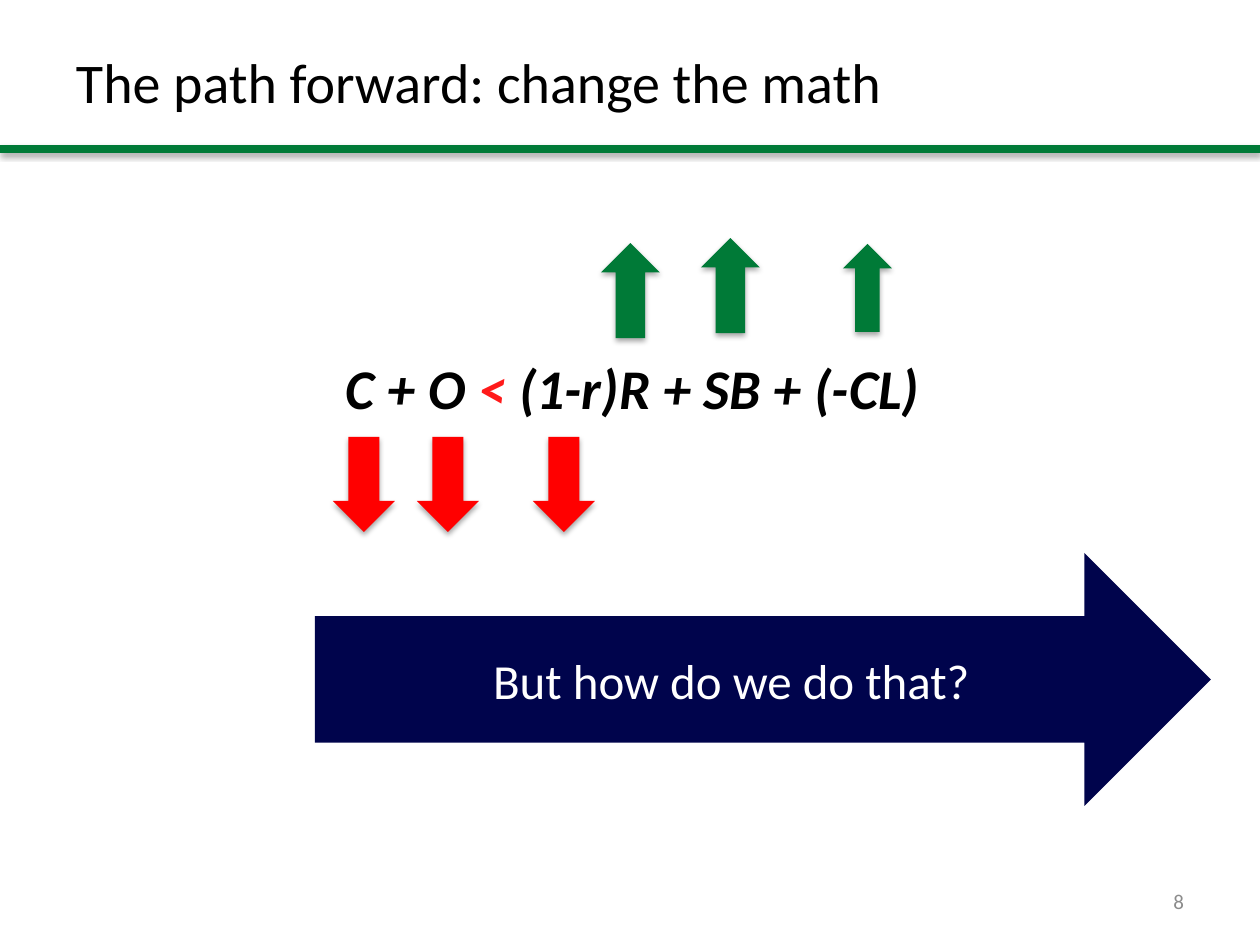
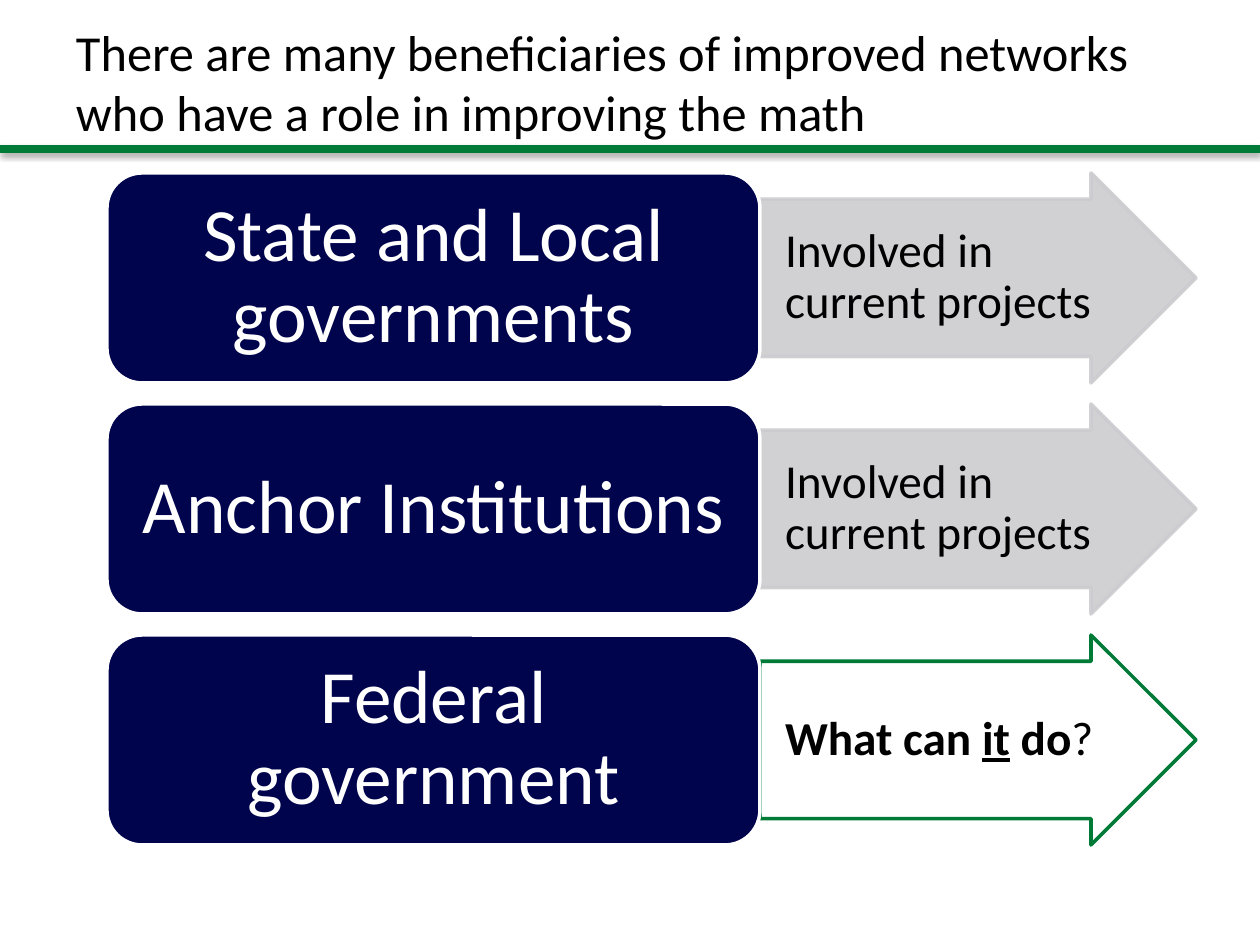
from lxml import etree
from pptx import Presentation
from pptx.dml.color import RGBColor
from pptx.enum.shapes import MSO_CONNECTOR, MSO_SHAPE
from pptx.enum.text import MSO_ANCHOR, MSO_AUTO_SIZE, PP_ALIGN
from pptx.oxml.ns import qn
from pptx.util import Pt

STRAIGHT = MSO_CONNECTOR.STRAIGHT
UP, DOWN, RIGHT_ARROW = MSO_SHAPE.UP_ARROW, MSO_SHAPE.DOWN_ARROW, MSO_SHAPE.RIGHT_ARROW
ROUNDED = MSO_SHAPE.ROUNDED_RECTANGLE
MIDDLE = MSO_ANCHOR.MIDDLE
LEFT, CENTER, RIGHT = PP_ALIGN.LEFT, PP_ALIGN.CENTER, PP_ALIGN.RIGHT
NO_FIT = MSO_AUTO_SIZE.NONE

BLACK = RGBColor(0x00, 0x00, 0x00)
WHITE = RGBColor(0xFF, 0xFF, 0xFF)
GREEN = RGBColor(0x00, 0x7A, 0x37)
RED = RGBColor(0xFF, 0x00, 0x00)
LESS_RED = RGBColor(0xFF, 0x1A, 0x1A)
NAVY = RGBColor(0x00, 0x04, 0x4C)
SILVER = RGBColor(0xCC, 0xCC, 0xD0)
GRAY = RGBColor(0x8C, 0x8C, 0x8C)

FONT = "Calibri"
WIDTH, HEIGHT = 1260, 945
EMU_PER_INCH, PX_PER_INCH = 914400, 126


def px(*lengths):
    return [round(length * EMU_PER_INCH / PX_PER_INCH) for length in lengths]


def write(frame, text, size=28, color=BLACK, align=LEFT, insets=(13, 6, 13, 6),
          spacing=None, bold=False, italic=False):
    frame.word_wrap = True
    frame.auto_size = NO_FIT
    frame.vertical_anchor = MIDDLE
    (frame.margin_left, frame.margin_top,
     frame.margin_right, frame.margin_bottom) = px(*insets)
    paragraph = frame.paragraphs[0]
    paragraph.alignment = align
    if spacing:
        paragraph.line_spacing = spacing
    pieces = [(text, {})] if isinstance(text, str) else text
    for words, changes in pieces:
        run = paragraph.add_run()
        run.text = words
        font = run.font
        font.name, font.size = FONT, Pt(size)
        font.bold = changes.get("bold", bold)
        font.italic = italic
        font.underline = changes.get("underline", False)
        font.color.rgb = changes.get("color", color)


def add_effects(properties, shadow):
    for old in properties.findall(qn("a:effectLst")):
        properties.remove(old)
    effects = etree.SubElement(properties, qn("a:effectLst"))
    if shadow:
        outer = etree.SubElement(effects, qn("a:outerShdw"), blurRad="40000",
                                 dist="23000", dir="5400000", rotWithShape="0")
        tint = etree.SubElement(outer, qn("a:srgbClr"), val=str(BLACK))
        etree.SubElement(tint, qn("a:alpha"), val="35000")


class Deck:
    def __init__(self):
        self.presentation = Presentation()
        self.presentation.slide_width, self.presentation.slide_height = px(WIDTH, HEIGHT)
        self.slide = None

    def start_slide(self, title, size):
        self.slide = self.presentation.slides.add_slide(self.presentation.slide_layouts[5])
        self.band()
        heading = self.slide.shapes.title
        heading.left, heading.top, heading.width, heading.height = px(63, 38, 1134, 87)
        write(heading.text_frame, title, size=size)

    def band(self):
        rule = self.slide.shapes.add_connector(STRAIGHT, *px(0, 149, WIDTH, 149))
        rule.line.color.rgb = GREEN
        rule.line.width = Pt(5)
        add_effects(rule.line._get_or_add_ln().getparent(), shadow=True)

    def text(self, box, text, **style):
        write(self.slide.shapes.add_textbox(*px(*box)).text_frame, text, **style)

    def shape(self, kind, box, fill, line=None, shadow=False, opacity=100,
              adjustments=(), text=None, **style):
        shape = self.slide.shapes.add_shape(kind, *px(*box))
        for index, value in enumerate(adjustments):
            shape.adjustments[index] = value
        shape.fill.solid()
        shape.fill.fore_color.rgb = fill
        if line is None:
            shape.line.fill.background()
        else:
            shape.line.color.rgb = line
            shape.line.width = Pt(2)
        shape.shadow.inherit = False
        properties = shape._element.spPr
        if shadow:
            add_effects(properties, shadow=True)
        if opacity < 100:
            for tint in properties.iter(qn("a:srgbClr")):
                etree.SubElement(tint, qn("a:alpha"), val=str(opacity * 1000))
        if text:
            write(shape.text_frame, text, **style)


def build_math(deck):
    deck.start_slide("The path forward: change the math", 32)
    deck.text((333, 353, 606, 68),
              [("C + O ", {}), ("<", {"color": LESS_RED}), (" (1-r)R + SB + (-CL)", {})],
              size=32, bold=True, italic=True)
    for left in (333, 417, 533):
        deck.shape(DOWN, (left, 437, 62, 95), RED, shadow=True)
    for rise in ((601, 243, 59, 95), (701, 238, 59, 95), (843, 244, 49, 88)):
        deck.shape(UP, rise, GREEN, shadow=True)
    deck.shape(RIGHT_ARROW, (315, 553, 896, 253), NAVY, text="But how do we do that?",
               size=28, color=WHITE, align=CENTER)
    deck.text((903, 876, 294, 50), "8", size=12, color=GRAY, align=RIGHT)


def build_beneficiaries(deck):
    deck.start_slide("There are many beneficiaries of improved networks "
                     "who have a role in improving the math", 28.8)
    involved = "Involved in current projects"
    question = [("What can ", {}), ("it", {"underline": True}), (" do", {}),
                ("?", {"bold": False})]
    current = dict(fill=SILVER, line=SILVER, opacity=90, text=involved)
    future = dict(fill=WHITE, line=GREEN, text=question, bold=True)
    rows = (("State and Local governments", current),
            ("Anchor Institutions", current),
            ("Federal government", future))
    for row, (beneficiary, role) in enumerate(rows):
        top = 173 + 231 * row
        deck.shape(RIGHT_ARROW, (760, top, 436, 210), adjustments=(0.75, 0.5),
                   size=27, spacing=0.9, insets=(25, 0, 0, 0), **role)
        deck.shape(ROUNDED, (107, top, 653, 210), NAVY, line=WHITE, text=beneficiary,
                   size=43, color=WHITE, align=CENTER, spacing=0.9,
                   insets=(23, 11, 23, 11))


def main():
    deck = Deck()
    build_math(deck)
    build_beneficiaries(deck)
    deck.presentation.save("out.pptx")


if __name__ == "__main__":
    main()
